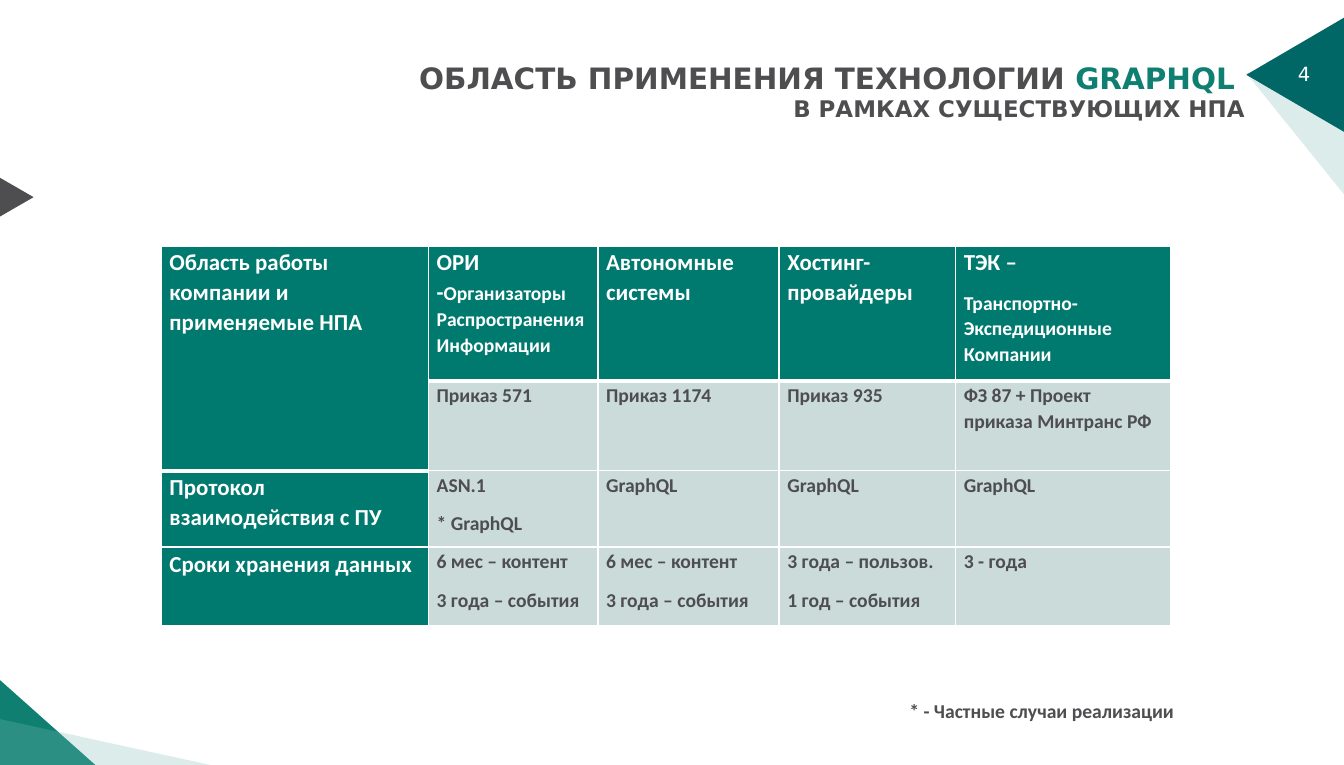
"""Build the slide on where GraphQL applies under the existing regulations."""
from lxml.etree import SubElement
from pptx import Presentation
from pptx.dml.color import RGBColor as Rgb
from pptx.enum.shapes import MSO_SHAPE as Shape
from pptx.enum.text import MSO_ANCHOR as Anchor, PP_ALIGN as Align
from pptx.oxml.ns import qn
from pptx.util import Inches, Pt

SLIDE_WIDTH, SLIDE_HEIGHT = Inches(11.42), Inches(6.5)
COLORS = {
    "white": "FFFFFF", "gray": "4E4D50", "green": "0E7F70", "deep": "006666",
    "mist": "7FBCB7", "header": "00796F", "body": "CADBDA",
}
TABLE_FONT, TITLE_FONT = "Calibri", "DejaVu Sans"
TABLE_LEFT, TABLE_TOP = 12, 32.15
COLUMN_SHARES = [19.88, 12.61, 13.49, 13.13, 16.02]
ROW_SHARES = [17.69, 11.69, 10, 10.31]
HEADINGS = [
    [[("Область работы компании и применяемые НПА", 14)]],
    [[("ОРИ -", 14), ("Организаторы Распространения Информации", 12)]],
    [[("Автономные системы", 14)]],
    [[("Хостинг-провайдеры", 14)]],
    [[("ТЭК –", 14)], [("Транспортно- Экспедиционные Компании", 12)]],
]
BODY_ROWS = [
    ["", "Приказ 571", "Приказ 1174", "Приказ 935", "ФЗ 87 + Проект приказа Минтранс РФ"],
    ["Протокол взаимодействия с ПУ", "ASN.1\n* GraphQL", "GraphQL", "GraphQL", "GraphQL"],
    ["Сроки хранения данных", "6 мес – контент\n3 года – события",
     "6 мес – контент\n3 года – события", "3 года – пользов.\n1 год – события", "3 - года"],
]


def color(name):
    return Rgb.from_string(COLORS[name])


def across(share):
    return int(SLIDE_WIDTH * share / 100)


def down(share):
    return int(SLIDE_HEIGHT * share / 100)


def place(left, top, width, height):
    return across(left), down(top), across(width), down(height)


def add_triangle(page, bounds, fill, rotation=0, apex=0.5, opacity=None):
    left, top, width, height = place(*bounds)
    if rotation:
        left, top = left + (width - height) // 2, top + (height - width) // 2
        width, height = height, width
    triangle = page.shapes.add_shape(Shape.ISOSCELES_TRIANGLE, left, top, width, height)
    triangle.adjustments[0] = apex
    triangle.rotation = rotation
    triangle.shadow.inherit = False
    triangle.line.fill.background()
    triangle.fill.solid()
    triangle.fill.fore_color.rgb = color(fill)
    if opacity is not None:
        tint = triangle.fill._xPr.find(qn("a:solidFill"))[0]
        SubElement(tint, qn("a:alpha"), val=str(opacity * 1000))


def write(frame, paragraphs, font, align=Align.LEFT, bold=True):
    for index, runs in enumerate(paragraphs):
        para = frame.add_paragraph() if index else frame.paragraphs[0]
        para.alignment = align
        for text, size, tone in runs:
            span = para.add_run()
            span.text = text
            span.font.name, span.font.size, span.font.bold = font, Pt(size), bold
            span.font.color.rgb = color(tone)


def add_text(page, bounds, paragraphs, font, wrap=True, inset=None, anchor=Anchor.TOP, **style):
    frame = page.shapes.add_textbox(*place(*bounds)).text_frame
    frame.word_wrap = wrap
    frame.vertical_anchor = anchor
    if inset is not None:
        frame.margin_left = frame.margin_right = Inches(inset)
        frame.margin_top = frame.margin_bottom = Inches(inset)
    write(frame, paragraphs, font, **style)


def add_borders(cell, widths):
    properties = cell._tc.get_or_add_tcPr()
    for side, width in widths.items():
        line = SubElement(properties, qn(f"a:ln{side}"), w=str(Pt(width)))
        paint = SubElement(line, qn("a:solidFill"))
        SubElement(paint, qn("a:srgbClr"), val=COLORS["white"])


def format_cell(cell, paragraphs, fill, borders):
    add_borders(cell, borders)
    cell.fill.solid()
    cell.fill.fore_color.rgb = color(fill)
    cell.margin_left = cell.margin_right = Inches(0.07)
    cell.margin_top, cell.margin_bottom = Inches(0.01), 0
    write(cell.text_frame, paragraphs, TABLE_FONT)
    for para in cell.text_frame.paragraphs:
        para.line_spacing, para.space_after = 1.07, Pt(8)


def body_paragraphs(text, size):
    return [[(line, size)] for line in text.split("\n")] if text else []


def add_rules_table(page):
    bounds = place(TABLE_LEFT, TABLE_TOP, sum(COLUMN_SHARES), sum(ROW_SHARES))
    table = page.shapes.add_table(len(ROW_SHARES), len(COLUMN_SHARES), *bounds).table
    for column, share in zip(table.columns, COLUMN_SHARES):
        column.width = across(share)
    for row, share in zip(table.rows, ROW_SHARES):
        row.height = down(share)
    table.cell(0, 0).merge(table.cell(1, 0))
    for row_index, row in enumerate([HEADINGS] + BODY_ROWS):
        for column_index, content in enumerate(row):
            heading = row_index == 0 or column_index == 0
            fill, tone, size = ("header", "white", 14) if heading else ("body", "gray", 12)
            paragraphs = body_paragraphs(content, size) if row_index else content
            toned = [[(text, points, tone) for text, points in runs] for runs in paragraphs]
            thick = row_index == 0 or (row_index, column_index) == (1, 0)
            borders = {"L": 1, "R": 1}
            if row_index == 0:
                borders["T"] = 1
            borders["B"] = 3 if thick else 1
            format_cell(table.cell(row_index, column_index), toned, fill, borders)


def add_decorations(page):
    add_triangle(page, (92.73, 6, 10.51, 26.46), "mist", 270, 0.865, 27)
    add_triangle(page, (92.73, 2.31, 7.27, 14.92), "deep", 270)
    add_triangle(page, (-0.09, 88.77, 7.18, 11.23), "green", apex=0)
    add_triangle(page, (-0.39, 22.85, 2.89, 5.85), "gray", 90)
    add_triangle(page, (0, 94, 15.67, 6), "mist", 90, 1, 27)


def main():
    deck = Presentation()
    deck.slide_width, deck.slide_height = SLIDE_WIDTH, SLIDE_HEIGHT
    page = deck.slides.add_slide(deck.slide_layouts[6])
    add_decorations(page)
    add_text(page, (95.71, 7.38, 4.29, 5.69), [[("4", 12, "white")]], TITLE_FONT, bold=False)
    add_rules_table(page)
    add_text(page, (66.81, 90.62, 21.63, 4.62),
             [[("* - Частные случаи реализации", 12, "gray")]], TABLE_FONT, wrap=False)
    title = [
        [("ОБЛАСТЬ ПРИМЕНЕНИЯ ТЕХНОЛОГИИ ", 18, "gray"), ("GRAPHQL ", 18, "green")],
        [("В РАМКАХ СУЩЕСТВУЮЩИХ НПА", 14, "gray")],
    ]
    add_text(page, (23.29, 7.38, 69.53, 9.08), title, TITLE_FONT,
             inset=0.02, anchor=Anchor.MIDDLE, align=Align.RIGHT)
    deck.save("out.pptx")


if __name__ == "__main__":
    main()
